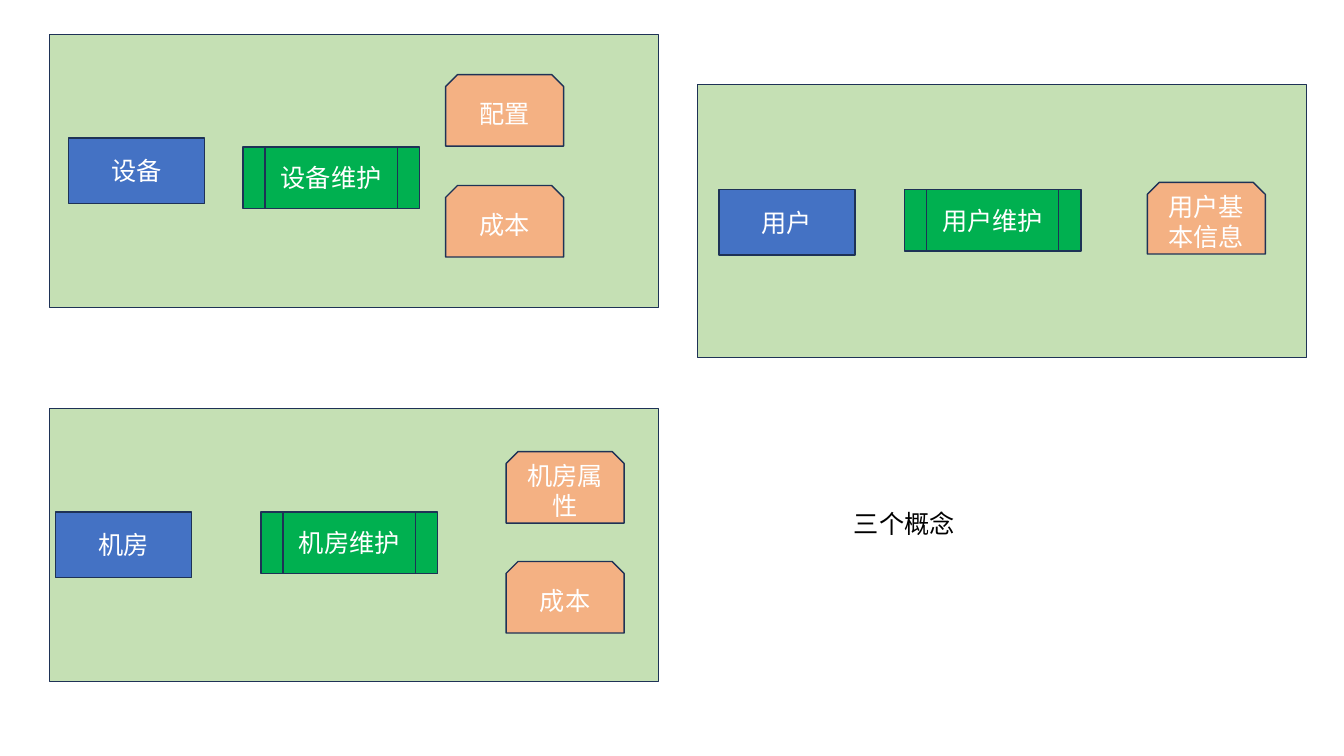
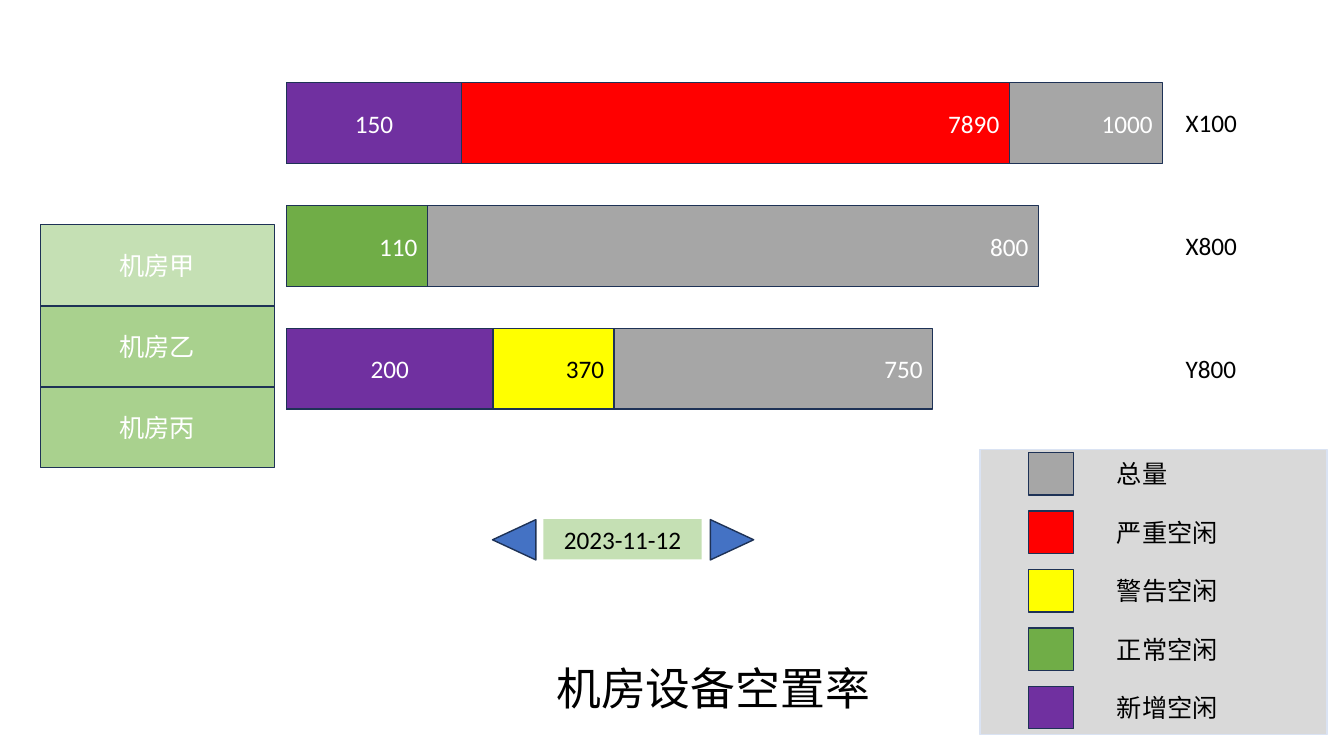
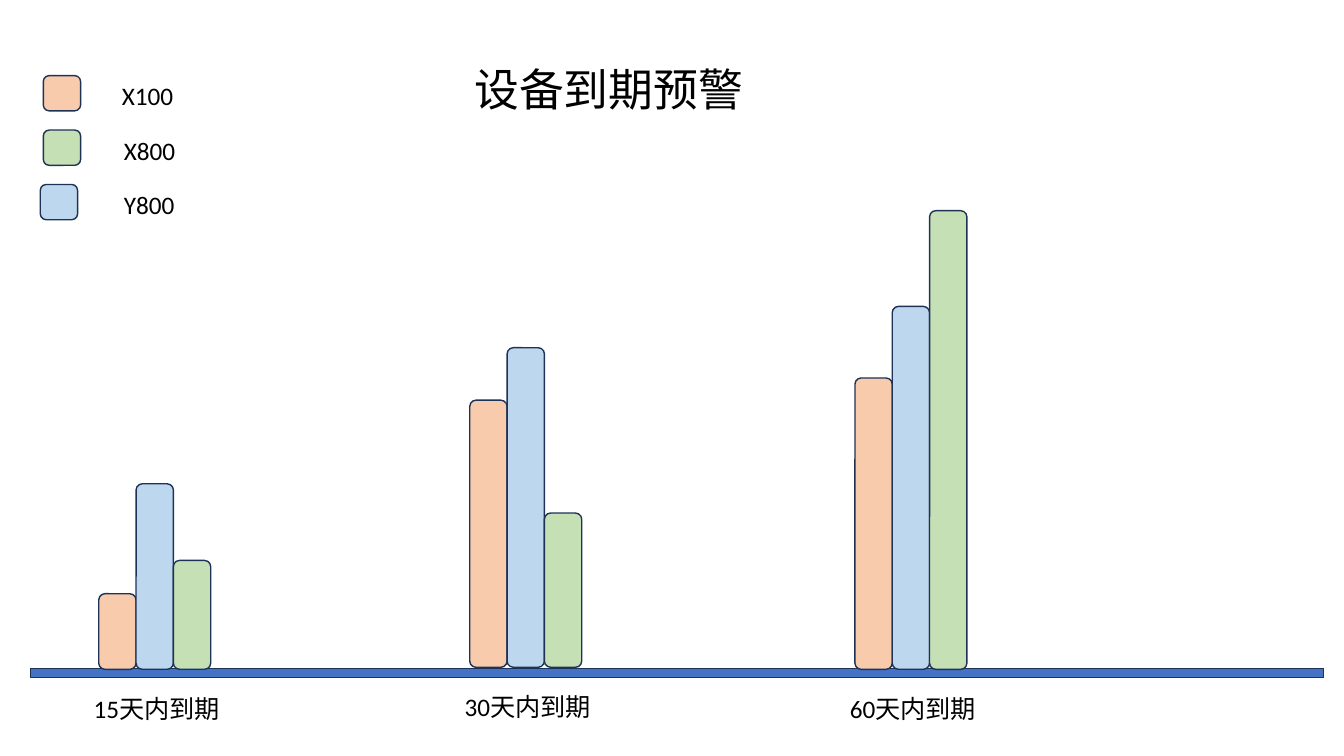
from dataclasses import dataclass
from typing import Optional

from pptx import Presentation
from pptx.dml.color import RGBColor
from pptx.enum.lang import MSO_LANGUAGE_ID
from pptx.enum.shapes import MSO_SHAPE
from pptx.enum.text import MSO_ANCHOR, MSO_AUTO_SIZE, PP_ALIGN
from pptx.util import Inches, Pt


@dataclass(frozen=True)
class Theme:
    font: str = "Calibri"
    body: int = 18
    title: int = 32
    border: float = 1
    outline: str = "1E3256"
    white: str = "FFFFFF"
    black: str = "000000"
    blue: str = "4472C4"
    pale_blue: str = "BDD7EE"
    ice: str = "DAE3F3"
    pale_green: str = "C5E0B4"
    soft_green: str = "A9D18E"
    process_green: str = "00B050"
    green: str = "70AD47"
    orange: str = "F4B183"
    pale_orange: str = "F8CBAD"
    gray: str = "A6A6A6"
    light_gray: str = "D9D9D9"
    red: str = "FF0000"
    yellow: str = "FFFF00"
    purple: str = "7030A0"


THEME = Theme()
MODELS = ("X100", "X800", "Y800")


@dataclass(frozen=True)
class Box:
    left: float
    top: float
    width: float
    height: float

    def lengths(self) -> tuple:
        return tuple(Inches(v) for v in (self.left, self.top, self.width, self.height))


@dataclass(frozen=True)
class Concept:
    """A panel holding a subject, its process and its attributes."""
    panel: tuple
    subject: tuple
    process: tuple
    attributes: tuple
    name: str


@dataclass(frozen=True)
class Segment:
    """A bar drawn from the shared left edge; later ones cover earlier ones."""
    width: float
    value: str
    fill: str
    color: str = THEME.white
    align: PP_ALIGN = PP_ALIGN.RIGHT


@dataclass(frozen=True)
class Period:
    label: str
    left: float
    baseline: float
    heights: tuple


# Shared drawing helpers
def write(frame, text: str, *, size: int = THEME.body, color: str = THEME.black,
          align: PP_ALIGN = PP_ALIGN.LEFT) -> None:
    para = frame.paragraphs[0]
    para.alignment = align
    span = para.add_run()
    span.text = text
    span.font.name = THEME.font
    span.font.size = Pt(size)
    span.font.color.rgb = RGBColor.from_string(color)
    span.font.language_id = MSO_LANGUAGE_ID.SIMPLIFIED_CHINESE


def add_block(page, box: Box, fill: str, *, text: str = "",
              kind: MSO_SHAPE = MSO_SHAPE.RECTANGLE, line: Optional[str] = THEME.outline,
              color: str = THEME.white, align: PP_ALIGN = PP_ALIGN.CENTER,
              rotation: float = 0) -> None:
    block = page.shapes.add_shape(kind, *box.lengths())
    block.shadow.inherit = False
    block.rotation = rotation
    block.fill.solid()
    block.fill.fore_color.rgb = RGBColor.from_string(fill)
    if line:
        block.line.color.rgb = RGBColor.from_string(line)
        block.line.width = Pt(THEME.border)
    else:
        block.line.fill.background()
    if text:
        block.text_frame.word_wrap = True
        block.text_frame.vertical_anchor = MSO_ANCHOR.MIDDLE
        write(block.text_frame, text, color=color, align=align)


def add_label(page, box: Box, text: str, *, size: int = THEME.body,
              align: PP_ALIGN = PP_ALIGN.LEFT) -> None:
    label = page.shapes.add_textbox(*box.lengths())
    label.text_frame.word_wrap = True
    label.text_frame.auto_size = MSO_AUTO_SIZE.SHAPE_TO_FIT_TEXT
    write(label.text_frame, text, size=size, align=align)


# Slide 1: concepts
CONCEPTS = (
    Concept((6.92, 0.84), (7.13, 1.88), (8.97, 1.88),
            (("用户基本信息", 11.38, 1.81),), "用户"),
    Concept((0.49, 4.05), (0.55, 5.08), (2.59, 5.08),
            (("机房属性", 5.02, 4.48), ("成本", 5.02, 5.57)), "机房"),
    Concept((0.49, 0.34), (0.68, 1.37), (2.41, 1.46),
            (("配置", 4.42, 0.74), ("成本", 4.42, 1.84)), "设备"),
)


def draw_concepts(page) -> None:
    for concept in CONCEPTS:
        add_block(page, Box(*concept.panel, 6.04, 2.71), THEME.pale_green)
        add_block(page, Box(*concept.subject, 1.35, 0.65), THEME.blue, text=concept.name)
        add_block(page, Box(*concept.process, 1.75, 0.61), THEME.process_green,
                  text=concept.name + "维护", kind=MSO_SHAPE.FLOWCHART_PREDEFINED_PROCESS)
        for text, left, top in concept.attributes:
            add_block(page, Box(left, top, 1.17, 0.71), THEME.orange, text=text,
                      kind=MSO_SHAPE.SNIP_2_SAME_RECTANGLE)
    add_label(page, Box(8.37, 4.99, 3.6, 0.4), "三个概念")


# Slide 2: idle rate by model
ROOMS = (("机房甲", THEME.pale_green), ("机房乙", THEME.soft_green), ("机房丙", THEME.soft_green))
BARS = (
    (Segment(8.69, "1000", THEME.gray), Segment(7.17, "7890", THEME.red),
     Segment(1.74, "150", THEME.purple, align=PP_ALIGN.CENTER)),
    (Segment(7.46, "800", THEME.gray), Segment(1.4, "110", THEME.green)),
    (Segment(6.41, "750", THEME.gray), Segment(3.25, "370", THEME.yellow, THEME.black),
     Segment(2.05, "200", THEME.purple, align=PP_ALIGN.CENTER)),
)
IDLE_LEGEND = (("总量", THEME.gray), ("严重空闲", THEME.red), ("警告空闲", THEME.yellow),
               ("正常空闲", THEME.green), ("新增空闲", THEME.purple))


def draw_idle_rate(page) -> None:
    for index, (room, fill) in enumerate(ROOMS):
        add_block(page, Box(0.4, 2.23 + index * 0.805, 2.32, 0.8), fill, text=room)

    for index, (model, segments) in enumerate(zip(MODELS, BARS)):
        top = 0.82 + index * 1.22
        for segment in segments:
            add_block(page, Box(2.84, top, segment.width, 0.8), segment.fill,
                      text=segment.value, color=segment.color, align=segment.align)
        add_label(page, Box(11.66, top + 0.2, 1.01, 0.4), model)

    # Date picker
    add_block(page, Box(5.39, 5.15, 1.57, 0.4), THEME.pale_green, text="2023-11-12",
              line=None, color=THEME.black)
    for left, rotation in ((4.9, 270), (7.06, 90)):
        add_block(page, Box(left, 5.14, 0.4, 0.43), THEME.blue,
                  kind=MSO_SHAPE.FLOWCHART_EXTRACT, rotation=rotation)
    add_label(page, Box(3.54, 6.51, 7.07, 0.64), "机房设备空置率",
              size=THEME.title, align=PP_ALIGN.CENTER)

    # Legend
    add_block(page, Box(9.72, 4.46, 3.44, 2.83), THEME.light_gray, line=THEME.ice)
    for index, (text, fill) in enumerate(IDLE_LEGEND):
        top = 4.49 + index * 0.58
        add_block(page, Box(10.2, top, 0.45, 0.42), fill)
        add_label(page, Box(10.98, top + 0.01, 1.48, 0.4), text)


# Slide 3: expiry warning
BAR_WIDTH = 0.37
BAR_FILLS = (THEME.pale_orange, THEME.pale_blue, THEME.pale_green)
PERIODS = (
    Period("15天内到期", 0.98, 6.64, (0.75, 1.84, 1.08)),
    Period("30天内到期", 4.66, 6.62, (2.65, 3.17, 1.53)),
    Period("60天内到期", 8.48, 6.64, (2.89, 3.6, 4.55)),
)
EXPIRY_LEGEND = ((0.43, 1.11, THEME.pale_orange), (0.43, 1.13, THEME.pale_green),
                 (0.4, 1.13, THEME.pale_blue))


def draw_expiry(page) -> None:
    add_block(page, Box(0.3, 6.63, 12.83, 0.09), THEME.blue)
    for period in PERIODS:
        for index, (height, fill) in enumerate(zip(period.heights, BAR_FILLS)):
            add_block(page, Box(period.left + index * BAR_WIDTH, period.baseline - height,
                                BAR_WIDTH, height), fill, kind=MSO_SHAPE.ROUNDED_RECTANGLE)
        add_label(page, Box(period.left - 0.15, period.baseline + 0.19, 1.71, 0.4), period.label)

    add_label(page, Box(4.14, 0.56, 3.8, 0.64), "设备到期预警",
              size=THEME.title, align=PP_ALIGN.CENTER)
    for index, (model, (left, label_left, fill)) in enumerate(zip(MODELS, EXPIRY_LEGEND)):
        top = 0.75 + index * 0.54
        add_block(page, Box(left, top, BAR_WIDTH, 0.35), fill,
                  kind=MSO_SHAPE.ROUNDED_RECTANGLE)
        add_label(page, Box(label_left, top, 0.83, 0.4), model)


def main() -> None:
    deck = Presentation()
    deck.slide_width, deck.slide_height = Inches(13.33), Inches(7.5)
    for draw in (draw_concepts, draw_idle_rate, draw_expiry):
        draw(deck.slides.add_slide(deck.slide_layouts[6]))
    deck.save("out.pptx")


if __name__ == "__main__":
    main()
